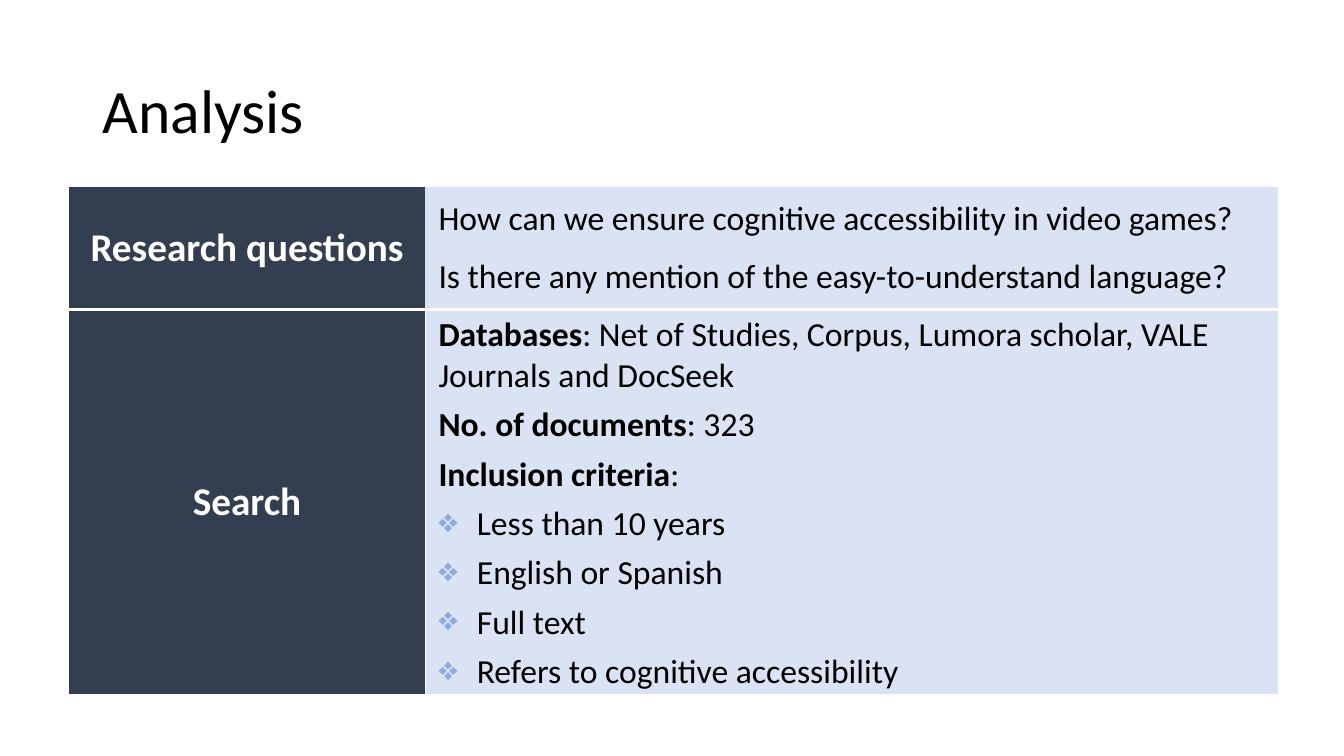
"""Build the Analysis slide: a title above a table of research questions and search."""
from lxml.etree import SubElement
from pptx import Presentation
from pptx.dml.color import RGBColor
from pptx.enum.text import MSO_ANCHOR as Anchor, PP_ALIGN as Align
from pptx.oxml.ns import qn
from pptx.util import Inches, Pt

FONT = "Calibri"
NAVY, PALE, BLUE, WHITE, BLACK = "333F50", "DAE3F3", "8FAADC", "FFFFFF", "000000"
TITLE = "Analysis"
QUESTIONS = [
    "How can we ensure cognitive accessibility in video games?",
    "Is there any mention of the easy-to-understand language?",
]
FACTS = [
    ("Databases", ": Net of Studies, Corpus, Lumora scholar, VALE Journals and DocSeek"),
    ("No. of documents", ": 323"),
    ("Inclusion criteria", ":"),
]
CRITERIA = ["Less than 10 years", "English or Spanish", "Full text",
            "Refers to cognitive accessibility"]
HEADINGS = ["Research questions", "Search"]
COLUMNS = [3.54, 8.46]
ROWS = [1.21, 3.83]
EDGES = [
    {"B": 2.25},
    {"L": 1, "R": 1, "T": 2.25, "B": 2.25},
]


def color(code):
    return RGBColor.from_string(code)


def add_span(para, text, size, code, bold=False):
    span = para.add_run()
    span.text = text
    span.font.name = FONT
    span.font.size = Pt(size)
    span.font.bold = bold
    span.font.color.rgb = color(code)


def next_para(frame):
    first = frame.paragraphs[0]
    return frame.add_paragraph() if first.runs else first


def add_bullet(para):
    props = para._p.get_or_add_pPr()
    props.set("marL", str(Inches(0.38)))
    props.set("indent", str(-Inches(0.38)))
    SubElement(SubElement(props, qn("a:buClr")), qn("a:srgbClr"), val=BLUE)
    SubElement(props, qn("a:buChar"), char="❖")


def style_cell(cell, fill, edges):
    props = cell._tc.get_or_add_tcPr()
    for side in "LRTB":
        width = edges.get(side, 0)
        line = SubElement(props, qn(f"a:ln{side}"), w=str(Pt(width)))
        if width:
            SubElement(SubElement(line, qn("a:solidFill")), qn("a:srgbClr"), val=WHITE)
        else:
            SubElement(line, qn("a:noFill"))
    cell.fill.solid()
    cell.fill.fore_color.rgb = color(fill)
    cell.vertical_anchor = Anchor.MIDDLE
    cell.margin_left = cell.margin_right = Inches(0.13)
    cell.margin_top = cell.margin_bottom = Inches(0.05)


def add_title(page):
    box = page.shapes.add_textbox(Inches(0.92), Inches(0.4), Inches(11.5), Inches(1.45))
    frame = box.text_frame
    frame.word_wrap = True
    frame.vertical_anchor = Anchor.MIDDLE
    para = frame.paragraphs[0]
    para.line_spacing = 0.9
    add_span(para, TITLE, 44, BLACK)


def add_grid(page):
    grid = page.shapes.add_table(len(ROWS), len(COLUMNS), Inches(0.68), Inches(1.86),
                                 Inches(sum(COLUMNS)), Inches(sum(ROWS))).table
    for column, width in zip(grid.columns, COLUMNS):
        column.width = Inches(width)
    for index, height in enumerate(ROWS):
        grid.rows[index].height = Inches(height)
        for column, fill in enumerate([NAVY, PALE]):
            style_cell(grid.cell(index, column), fill, EDGES[index])
        para = grid.cell(index, 0).text_frame.paragraphs[0]
        para.alignment = Align.CENTER
        add_span(para, HEADINGS[index], 28, WHITE, True)
    return grid


def fill_questions(frame):
    for question in QUESTIONS:
        para = next_para(frame)
        para.alignment = Align.JUSTIFY
        para.space_before = Pt(12)
        add_span(para, question, 24, BLACK)


def fill_search(frame):
    for label, detail in FACTS:
        para = next_para(frame)
        para.space_before = Pt(6)
        add_span(para, label, 24, BLACK, True)
        add_span(para, detail, 24, BLACK)
    for criterion in CRITERIA:
        para = next_para(frame)
        para.space_before = Pt(6)
        add_bullet(para)
        add_span(para, criterion, 24, BLACK)


def main():
    deck = Presentation()
    deck.slide_width, deck.slide_height = Inches(13.33), Inches(7.5)
    page = deck.slides.add_slide(deck.slide_layouts[6])
    add_title(page)
    grid = add_grid(page)
    fill_questions(grid.cell(0, 1).text_frame)
    fill_search(grid.cell(1, 1).text_frame)
    deck.save("out.pptx")


if __name__ == "__main__":
    main()
